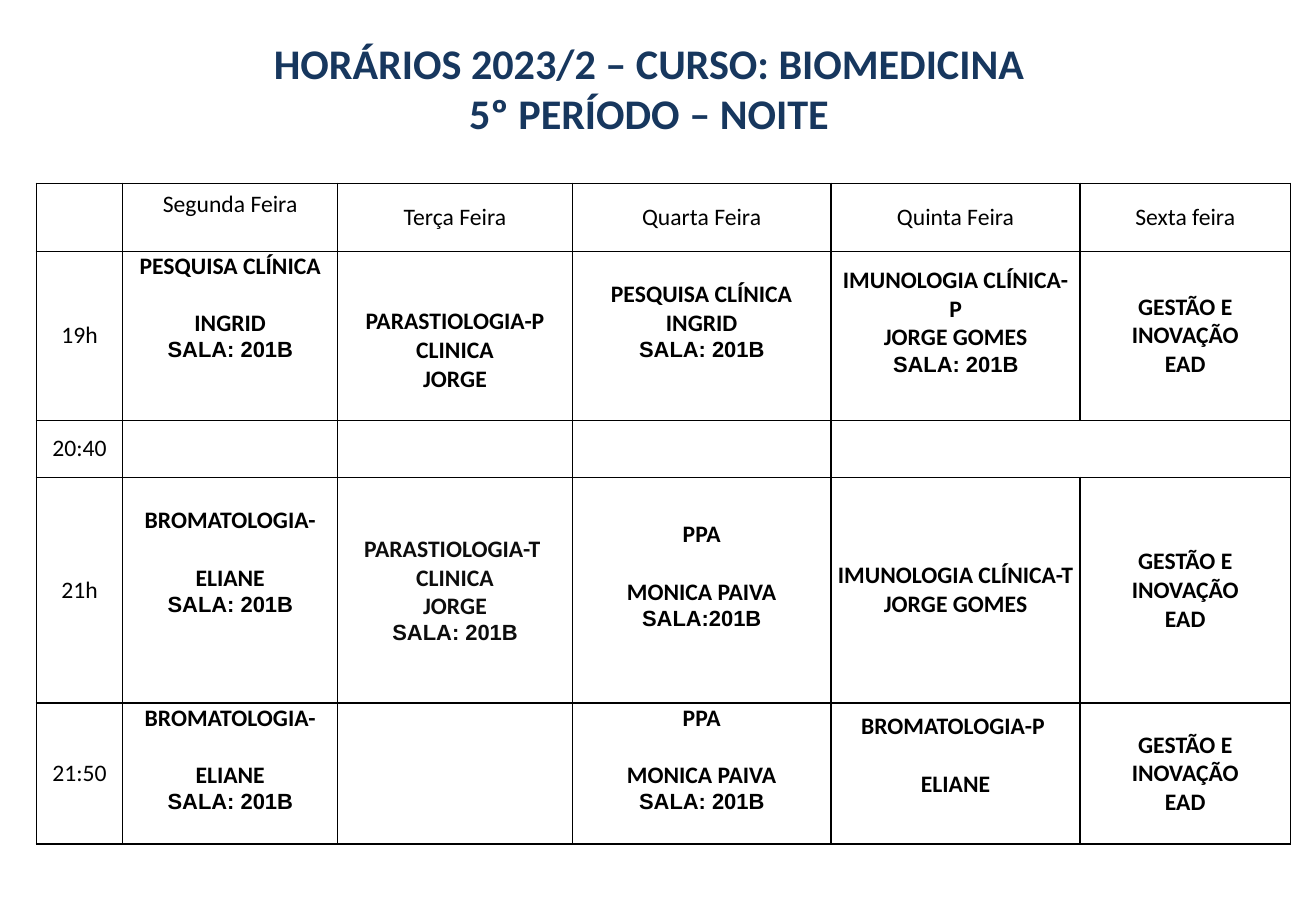
from dataclasses import dataclass

from lxml.etree import SubElement
from pptx import Presentation
from pptx.dml.color import RGBColor
from pptx.enum.text import MSO_ANCHOR as Anchor, PP_ALIGN as Align
from pptx.oxml.ns import qn
from pptx.util import Inches, Pt

BLACK, SOFT_BLACK, NAVY = "000000", "0D0D0D", "17375E"
COLUMN_WIDTHS = [0.71, 1.77, 1.93, 2.13, 2.05, 1.73]
ROW_HEIGHTS = [0.56, 1.39, 0.47, 1.86, 1.16]


@dataclass
class Line:
    text: str
    size: float = 14
    font: str = "Calibri"
    gap: float = 0


@dataclass
class Entry:
    lines: list[Line]
    bold: bool = True
    top: float = 0
    bottom: float = 0
    color: str = BLACK


def label(text: str, bottom: float = 0) -> Entry:
    return Entry([Line(text)], bold=False, bottom=bottom)


def room(text: str = "SALA: 201B") -> Line:
    return Line(text, 13, "Arial")


def spaced(text: str) -> Line:
    return Line(text, gap=17)


def rgb(color: str) -> RGBColor:
    return RGBColor.from_string(color)


def write_lines(frame, lines: list[Line], bold: bool, color: str) -> None:
    for index, line in enumerate(lines):
        para = frame.add_paragraph() if index else frame.paragraphs[0]
        para.alignment = Align.CENTER
        if line.gap:
            para.space_before = Pt(line.gap)
        span = para.add_run()
        span.text = line.text
        span.font.size = Pt(line.size)
        span.font.name = line.font
        span.font.bold = bold
        span.font.color.rgb = rgb(color)


def style_cell(cell) -> None:
    properties = cell._tc.get_or_add_tcPr()
    for side in ("a:lnL", "a:lnR", "a:lnT", "a:lnB"):
        border = SubElement(properties, qn(side), w=str(Pt(1)))
        fill = SubElement(border, qn("a:solidFill"))
        SubElement(fill, qn("a:srgbClr"), val=BLACK)
    cell.fill.background()
    cell.vertical_anchor = Anchor.MIDDLE
    cell.margin_left = cell.margin_right = Inches(0.05)
    cell.margin_top = cell.margin_bottom = 0


def fill_cell(cell, entry: Entry) -> None:
    cell.margin_top = Inches(entry.top)
    cell.margin_bottom = Inches(entry.bottom)
    write_lines(cell.text_frame, entry.lines, entry.bold, entry.color)


# Timetable content, row by row
management = Entry([Line("GESTÃO E INOVAÇÃO"), Line("EAD")])
food_science = [Line("BROMATOLOGIA-"), spaced("ELIANE"), room()]
ppa = [Line("PPA"), spaced("MONICA PAIVA")]

TIMETABLE = [
    [None, label("Segunda Feira", 0.22), label("Terça Feira"),
     label("Quarta Feira"), label("Quinta Feira"), label("Sexta feira")],
    [label("19h"),
     Entry([Line("PESQUISA CLÍNICA"), spaced("INGRID"), room()], bottom=0.47),
     Entry([Line("PARASTIOLOGIA-P CLINICA"), Line("JORGE")], top=0.24),
     Entry([Line("PESQUISA CLÍNICA"), Line("INGRID"), room()], bottom=0.24),
     Entry([Line("IMUNOLOGIA CLÍNICA-P"), Line("JORGE GOMES"), room()],
           bottom=0.24),
     management],
    [label("20:40"), None, None, None, None, None],
    [label("21h"),
     Entry(food_science, bottom=0.47),
     Entry([Line("PARASTIOLOGIA-T "), Line("CLINICA"), Line("JORGE"), room()],
           color=SOFT_BLACK),
     Entry([*ppa, room("SALA:201B")], bottom=0.24),
     Entry([Line("IMUNOLOGIA CLÍNICA-T"), Line("JORGE GOMES")]),
     management],
    [label("21:50"),
     Entry(food_science, bottom=0.24),
     None,
     Entry([*ppa, room()], bottom=0.24),
     Entry([Line("BROMATOLOGIA-P "), spaced("ELIANE")], bottom=0.3),
     management],
]


def add_title(page) -> None:
    box = page.shapes.add_textbox(
        Inches(0.3), Inches(0.25), Inches(10.08), Inches(0.94))
    frame = box.text_frame
    frame.word_wrap = True
    frame.vertical_anchor = Anchor.MIDDLE
    titles = ["HORÁRIOS 2023/2 – CURSO: BIOMEDICINA", "5º PERÍODO – NOITE"]
    write_lines(frame, [Line(text, 25) for text in titles], True, NAVY)


def add_timetable(page) -> None:
    table = page.shapes.add_table(
        len(ROW_HEIGHTS), len(COLUMN_WIDTHS), Inches(0.3), Inches(1.51),
        Inches(sum(COLUMN_WIDTHS)), Inches(sum(ROW_HEIGHTS))).table
    table.first_row = table.horz_banding = False
    for column, width in zip(table.columns, COLUMN_WIDTHS):
        column.width = Inches(width)
    for row, height in zip(table.rows, ROW_HEIGHTS):
        row.height = Inches(height)
    for row, entries in zip(table.rows, TIMETABLE):
        for cell, entry in zip(row.cells, entries):
            style_cell(cell)
            if entry:
                fill_cell(cell, entry)
    # The break on Thursday and Friday is one cell
    table.cell(2, 4).merge(table.cell(2, 5))


def main() -> None:
    deck = Presentation()
    deck.slide_width, deck.slide_height = Inches(10.83), Inches(7.5)
    page = deck.slides.add_slide(deck.slide_layouts[6])
    add_title(page)
    add_timetable(page)
    deck.save("out.pptx")


if __name__ == "__main__":
    main()
